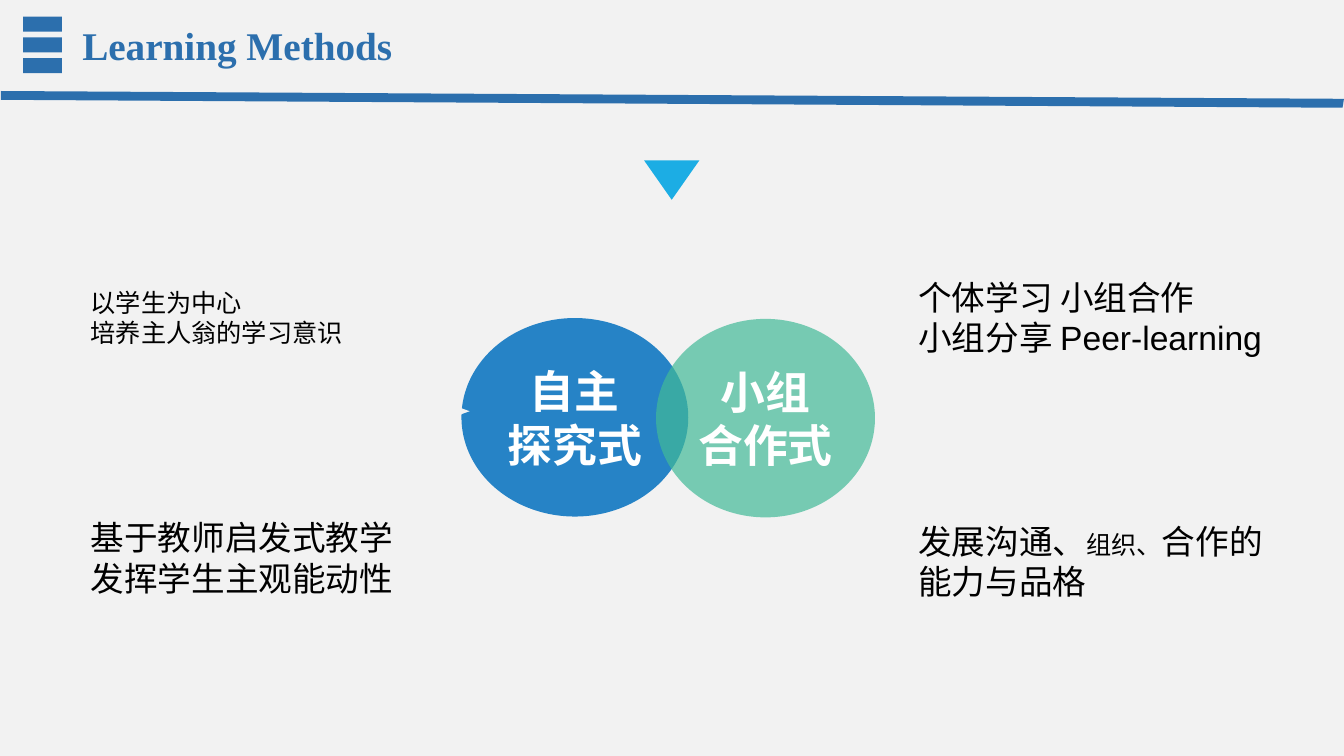
from lxml.etree import SubElement
from pptx import Presentation
from pptx.dml.color import RGBColor
from pptx.enum.shapes import MSO_SHAPE
from pptx.enum.text import MSO_ANCHOR, MSO_AUTO_SIZE, PP_ALIGN
from pptx.oxml.ns import qn
from pptx.util import Pt

BACKGROUND = RGBColor(0xF2, 0xF2, 0xF2)
HEADER_BLUE = RGBColor(0x2C, 0x6F, 0xAD)
SKY = RGBColor(0x1C, 0xAD, 0xE4)
CIRCLE_BLUE = RGBColor(0x26, 0x83, 0xC6)
CIRCLE_GREEN = RGBColor(0x42, 0xBA, 0x97)
WHITE = RGBColor(0xFF, 0xFF, 0xFF)
BLACK = RGBColor(0, 0, 0)

deck = Presentation()
deck.slide_width, deck.slide_height = Pt(960), Pt(540)
page = deck.slides.add_slide(deck.slide_layouts[5])
page.background.fill.solid()
page.background.fill.fore_color.rgb = BACKGROUND


def paint(shape, color):
    shape.fill.solid()
    shape.fill.fore_color.rgb = color
    shape.line.fill.background()
    shape.shadow.inherit = False


def add_outline(points, color):
    corners = [(Pt(x), Pt(y)) for x, y in points]
    builder = page.shapes.build_freeform(*corners[0])
    builder.add_line_segments(corners[1:], close=True)
    paint(builder.convert_to_shape(), color)


# Header: three bars, title and slanted rule
for row in range(3):
    bar = page.shapes.add_shape(MSO_SHAPE.RECTANGLE, Pt(16.6), Pt(12 + 14.8 * row), Pt(27.6), Pt(10.6))
    paint(bar, HEADER_BLUE)

title = page.shapes.title
title.left, title.top, title.width, title.height = Pt(58.8), Pt(14.4), Pt(420), Pt(34.6)
frame = title.text_frame
frame.text = "Learning Methods"
frame.auto_size = MSO_AUTO_SIZE.NONE
frame.vertical_anchor = MSO_ANCHOR.TOP
frame.margin_left = frame.margin_right = frame.margin_bottom = 0
frame.margin_top = Pt(1)
para = frame.paragraphs[0]
para.alignment = PP_ALIGN.LEFT
para.space_before = Pt(1)
para.font.name, para.font.size, para.font.bold = "Times New Roman", Pt(28), True
para.font.color.rgb = HEADER_BLUE

add_outline([(0.7, 65), (960, 70.6), (959, 77), (0.7, 71.3)], HEADER_BLUE)

# Pointer under the header
pointer = page.shapes.add_shape(MSO_SHAPE.FLOWCHART_MERGE, Pt(460), Pt(114.5), Pt(39.6), Pt(28.2))
paint(pointer, SKY)

# Overlapping circles
circles = [
    (329.6, 227.2, 162, CIRCLE_BLUE, ["自主", "探究式"]),
    (468.6, 227.8, 156.4, CIRCLE_GREEN, ["小组", "合作式"]),
]
for left, top, width, color, lines in circles:
    circle = page.shapes.add_shape(MSO_SHAPE.OVAL, Pt(left), Pt(top), Pt(width), Pt(141.8))
    paint(circle, color)
    frame = circle.text_frame
    frame.text = "\n".join(lines)
    frame.vertical_anchor = MSO_ANCHOR.MIDDLE
    frame.margin_left = frame.margin_right = 0
    for para in frame.paragraphs:
        para.alignment = PP_ALIGN.CENTER
        para.font.name, para.font.size, para.font.bold = "Arial", Pt(32), True
        para.font.color.rgb = WHITE
# The last circle, the green one, lets the blue show through
green = circle.fill.fore_color._xFill.find(qn("a:srgbClr"))
SubElement(green, qn("a:alpha"), val="70000")

# Callout panels: outer edge, inner edge, tip, top, bottom, half height of the tip
panels = [(90, 319.7, 335.5, 192.2, 395.3, 5.6), (869.8, 640.1, 625, 192.2, 285.8, 2.6)]
for outer, inner, tip, top, bottom, half in panels:
    middle = (top + bottom) / 2
    add_outline([(outer, top), (inner, top), (inner, middle - half), (tip, middle),
                 (inner, middle + half), (inner, bottom), (outer, bottom)], BACKGROUND)

# Notes around the circles: each line is a list of (text, size)
notes = [
    (64.8, 192.2, 69.1, [[("以学生为中心", 18)], [("培养主人翁的学习意识", 18)]]),
    (655.9, 198, 56.9, [[("个体学习 小组合作", 24)], [("小组分享 Peer-learning", 24)]]),
    (64.8, 369.7, 56.9, [[("基于教师启发式教学", 24)], [("发挥学生主观能动性", 24)]]),
    (655.9, 372.4, 56.9, [[("发展沟通、", 24), ("组织、", 18), ("合作的能力与品格", 24)]]),
]
for left, top, height, lines in notes:
    box = page.shapes.add_textbox(Pt(left), Pt(top), Pt(265), Pt(height))
    frame = box.text_frame
    frame.word_wrap = True
    frame.vertical_anchor = MSO_ANCHOR.MIDDLE
    frame.margin_left = frame.margin_right = frame.margin_top = frame.margin_bottom = 0
    for number, line in enumerate(lines):
        para = frame.add_paragraph() if number else frame.paragraphs[0]
        para.font.name = "Arial"
        para.font.color.rgb = BLACK
        for text, size in line:
            span = para.add_run()
            span.text = text
            span.font.size = Pt(size)

deck.save("out.pptx")
